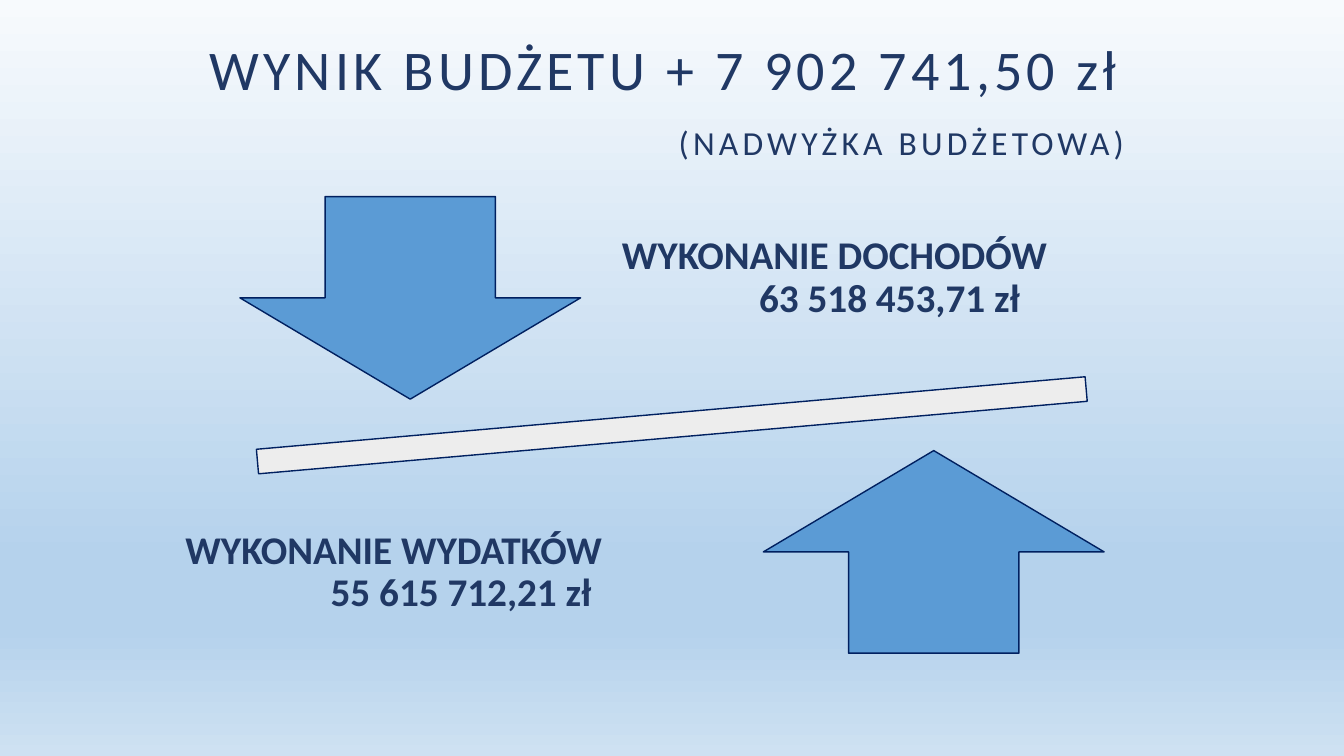
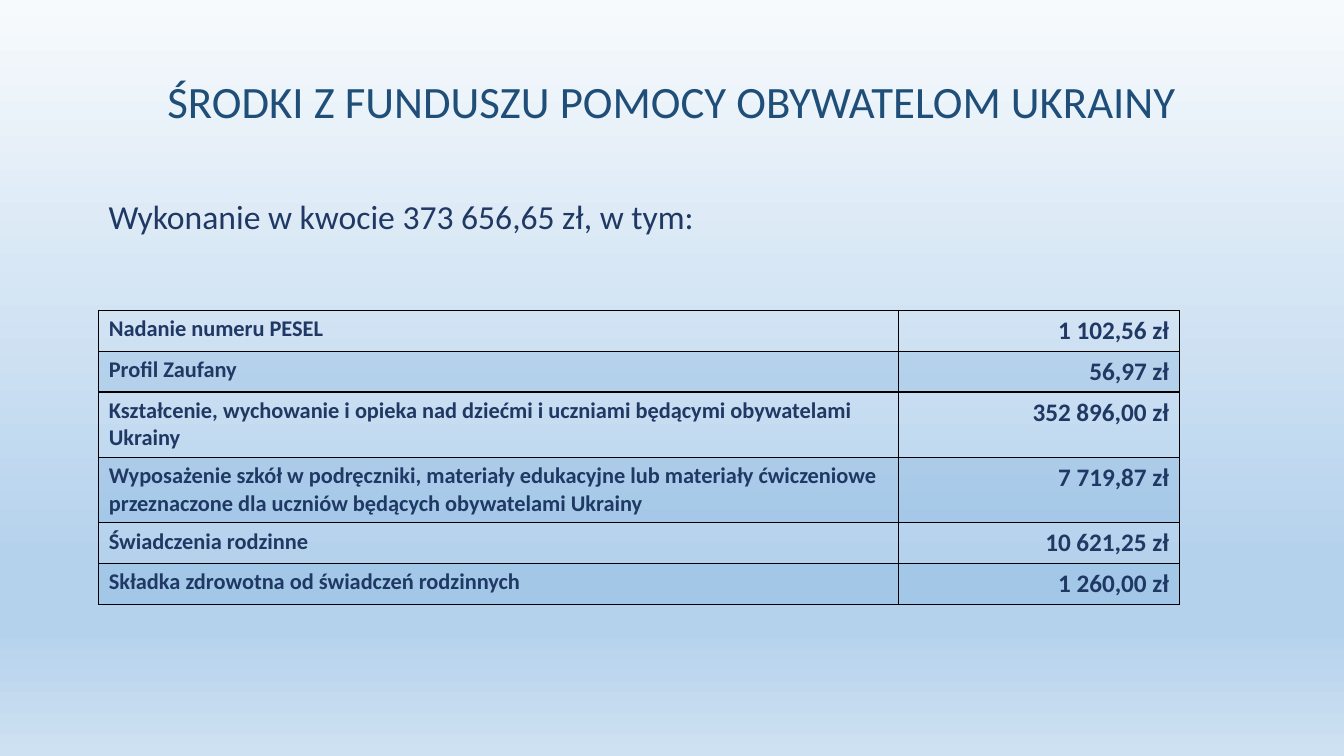
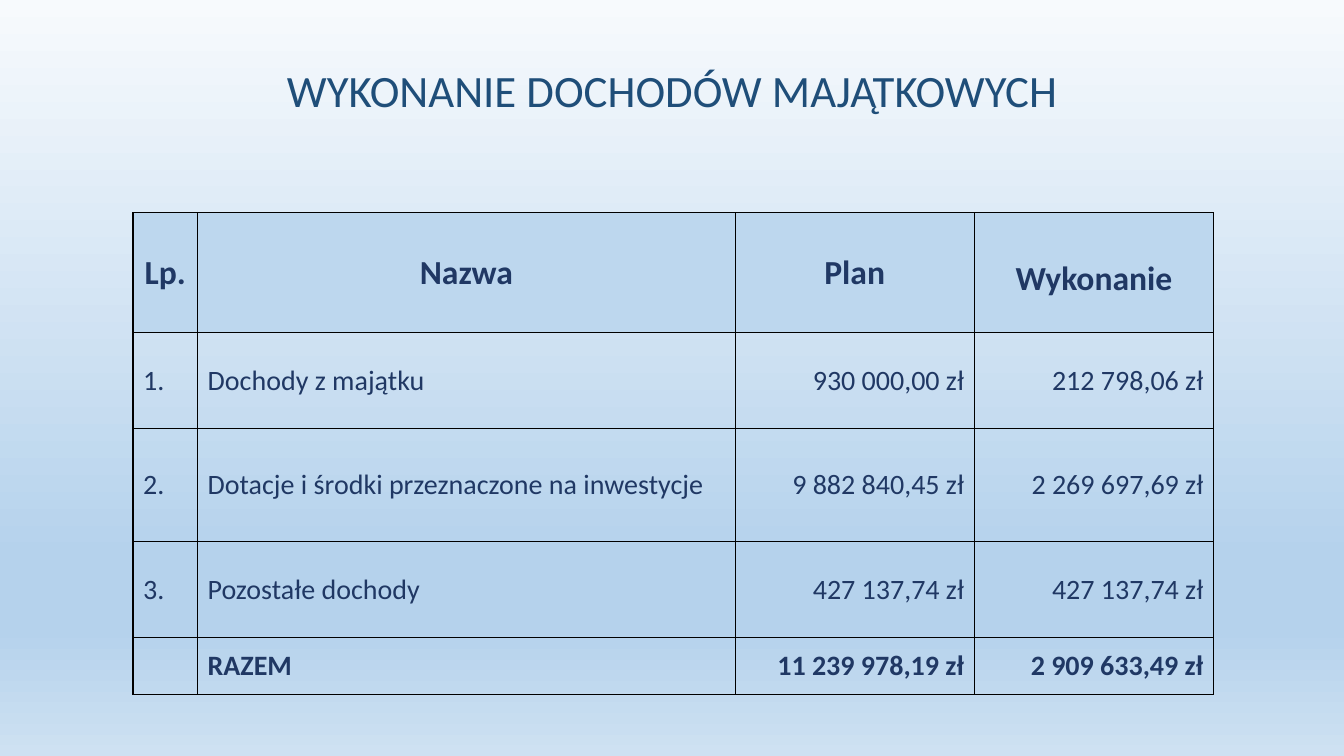
from lxml import etree
from pptx import Presentation
from pptx import util as u
from pptx.dml.color import RGBColor
from pptx.enum import shapes, text
from pptx.oxml.ns import qn

COLOURS = {"navy": "203864", "title": "1F4E79", "outline": "002060", "arrow": "5B9BD5",
           "beam": "EDEDED", "header": "BDD7EE", "border": "000000"}
BACKGROUND = [(0, "F7FAFD"), (74, "B5D2EC"), (83, "B5D2EC"), (100, "CEE1F2")]
FONT = "Calibri"
LEFT, CENTRE, RIGHT = text.PP_ALIGN.LEFT, text.PP_ALIGN.CENTER, text.PP_ALIGN.RIGHT
TOP, MIDDLE = text.MSO_ANCHOR.TOP, text.MSO_ANCHOR.MIDDLE

deck = Presentation()
deck.slide_width, deck.slide_height = u.Inches(13.333), u.Inches(7.5)
COL, ROW = deck.slide_width / 100, deck.slide_height / 100


def area(left, top, width, height):
    """Turn percentages of the slide into the four lengths of a frame."""
    return round(left * COL), round(top * ROW), round(width * COL), round(height * ROW)


def write(frame, words, size, colour="navy", bold=False, align=LEFT, line=1.0,
          before=0, indent=0, tracking=0, anchor=None):
    """Add one paragraph; indent is in percent of the slide's width."""
    frame.word_wrap = True
    if anchor is not None:
        frame.vertical_anchor = anchor
    para = frame.paragraphs[0] if not frame.text else frame.add_paragraph()
    para.alignment, para.line_spacing = align, line
    para.space_before = u.Pt(before)
    if indent:
        para._p.get_or_add_pPr().set("marL", str(round(indent * COL)))
    span = para.add_run()
    span.text = words
    span.font.name, span.font.size, span.font.bold = FONT, u.Pt(size), bold
    span.font.color.rgb = RGBColor.from_string(COLOURS[colour])
    if tracking:
        span._r.get_or_add_rPr().set("spc", str(tracking * 100))


# Shared background
master = deck.slide_master
master.background.fill.gradient()
master.background.fill.gradient_angle = 270
stops = next(master.element.iter(qn("a:gsLst")))
for stop in list(stops):
    stops.remove(stop)
for share, colour in BACKGROUND:
    stop = etree.SubElement(stops, qn("a:gs"), pos=str(share * 1000))
    etree.SubElement(stop, qn("a:srgbClr"), val=colour)

# Pages and their title frames
pages = []
for place in [(14.85, 3.33, 78.9, 19.33), (7.35, 3.6, 85.3, 19.33), (12.68, 7.6, 74.7, 8.53)]:
    page = deck.slides.add_slide(deck.slide_layouts[5])
    title = page.shapes.title
    title.left, title.top, title.width, title.height = area(*place)
    title.text_frame.auto_size = text.MSO_AUTO_SIZE.NONE
    pages.append(page)
balance, ukraine, assets = pages

# Budget balance
heading = balance.shapes.title.text_frame
write(heading, "WYNIK BUDŻETU + 7 902 741,50 zł", 40, tracking=3, anchor=MIDDLE)
write(heading, "(NADWYŻKA BUDŻETOWA)", 24, tracking=3, before=14.4, indent=34.9)

preset = shapes.MSO_SHAPE
for kind, place, colour, turn in [
    (preset.MATH_MINUS, (7.88, 49.33, 84.22, 13.87), "beam", 355),
    (preset.DOWN_ARROW, (17.85, 26, 25.35, 26.8), "arrow", 0),
    (preset.UP_ARROW, (56.8, 59.6, 25.35, 26.8), "arrow", 0),
]:
    shape = balance.shapes.add_shape(kind, *area(*place))
    shape.rotation = turn
    shape.shadow.inherit = False
    shape.fill.solid()
    shape.fill.fore_color.rgb = RGBColor.from_string(COLOURS[colour])
    shape.line.color.rgb = RGBColor.from_string(COLOURS["outline"])
    shape.line.width = u.Pt(1)

for left, top, label, amount, indent in [
    (44.63, 22.67, "WYKONANIE DOCHODÓW", "63 518 453,71 zł", 10.2),
    (12.15, 61.6, "WYKONANIE WYDATKÓW", "55 615 712,21 zł", 10.8),
]:
    frame = balance.shapes.add_textbox(*area(left, top, 43.8, 28.27)).text_frame
    frame.margin_left = frame.margin_right = u.Inches(0.22)
    write(frame, label, 28, bold=True, line=0.9, anchor=MIDDLE)
    write(frame, amount, 28, bold=True, line=0.9, indent=indent)

# Titles and introduction of the table pages
for page, words in [(ukraine, "ŚRODKI Z FUNDUSZU POMOCY OBYWATELOM UKRAINY"),
                    (assets, "WYKONANIE DOCHODÓW MAJĄTKOWYCH")]:
    write(page.shapes.title.text_frame, words, 32, "title", align=CENTRE, anchor=MIDDLE)
intro = ukraine.shapes.add_textbox(*area(7.35, 25.87, 81.7, 9)).text_frame
write(intro, "Wykonanie w kwocie 373 656,65 zł, w tym:", 24, line=0.9)

# Tables: cell formats are listed by column, row formats override them
support = [
    ("Nadanie numeru PESEL", "1 102,56 zł"),
    ("Profil Zaufany", "56,97 zł"),
    ("Kształcenie, wychowanie i opieka nad dziećmi i uczniami będącymi obywatelami Ukrainy",
     "352 896,00 zł"),
    ("Wyposażenie szkół w podręczniki, materiały edukacyjne lub materiały ćwiczeniowe "
     "przeznaczone dla uczniów będących obywatelami Ukrainy", "7 719,87 zł"),
    ("Świadczenia rodzinne", "10 621,25 zł"),
    ("Składka zdrowotna od świadczeń rodzinnych", "1 260,00 zł"),
]
income = [
    ("Lp.", "Nazwa", "Plan", "Wykonanie"),
    ("1.", "Dochody z majątku", "930 000,00 zł", "212 798,06 zł"),
    ("2.", "Dotacje i środki przeznaczone na inwestycje", "9 882 840,45 zł", "2 269 697,69 zł"),
    ("3.", "Pozostałe dochody", "427 137,74 zł", "427 137,74 zł"),
    ("", "RAZEM", "11 239 978,19 zł", "2 909 633,49 zł"),
]
label, money = {"size": 20, "anchor": MIDDLE}, {"size": 20, "anchor": MIDDLE, "align": RIGHT}
tables = [
    (ukraine, support, (7.35, 41.07), (59.5, 20.9), (5.4, 5.4, 8.65, 8.65, 5.4, 5.4),
     [{"size": 16, "bold": True, "anchor": TOP},
      {"size": 18, "bold": True, "anchor": TOP, "align": RIGHT}],
     {}, {row: ("arrow", 20) for row in (1, 3, 5)}),
    (assets, income, (9.9, 28.13), (4.8, 40, 17.8, 17.8), (15.9, 12.7, 14.95, 12.7, 7.5),
     [label, label, money, money],
     {0: {"size": 24, "bold": True, "align": CENTRE}, 4: {"bold": True}}, {0: ("header", 100)}),
]
for page, rows, corner, widths, heights, formats, overrides, fills in tables:
    table = page.shapes.add_table(len(rows), len(widths),
                                  *area(*corner, sum(widths), sum(heights))).table
    table.first_row = table.horz_banding = False
    for column, width in zip(table.columns, widths):
        column.width = round(width * COL)
    for r, (values, height) in enumerate(zip(rows, heights)):
        table.rows[r].height = round(height * ROW)
        for c, value in enumerate(values):
            cell = table.cell(r, c)
            properties = cell._tc.get_or_add_tcPr()
            for side in ("a:lnL", "a:lnR", "a:lnT", "a:lnB"):
                border = etree.SubElement(properties, qn(side), w=str(u.Pt(1)))
                paint = etree.SubElement(border, qn("a:solidFill"))
                etree.SubElement(paint, qn("a:srgbClr"), val=COLOURS["border"])
            if r in fills:
                colour, opacity = fills[r]
                cell.fill.solid()
                cell.fill.fore_color.rgb = RGBColor.from_string(COLOURS[colour])
                if opacity < 100:
                    tint = properties.find(qn("a:solidFill")).find(qn("a:srgbClr"))
                    etree.SubElement(tint, qn("a:alpha"), val=str(opacity * 1000))
            else:
                cell.fill.background()
            if value:
                style = {**formats[c], **overrides.get(r, {})}
                cell.vertical_anchor = style.pop("anchor")
                write(cell.text_frame, value, **style)
            if value == "Wykonanie":
                cell.margin_top = u.Inches(0.17)

deck.save("out.pptx")
